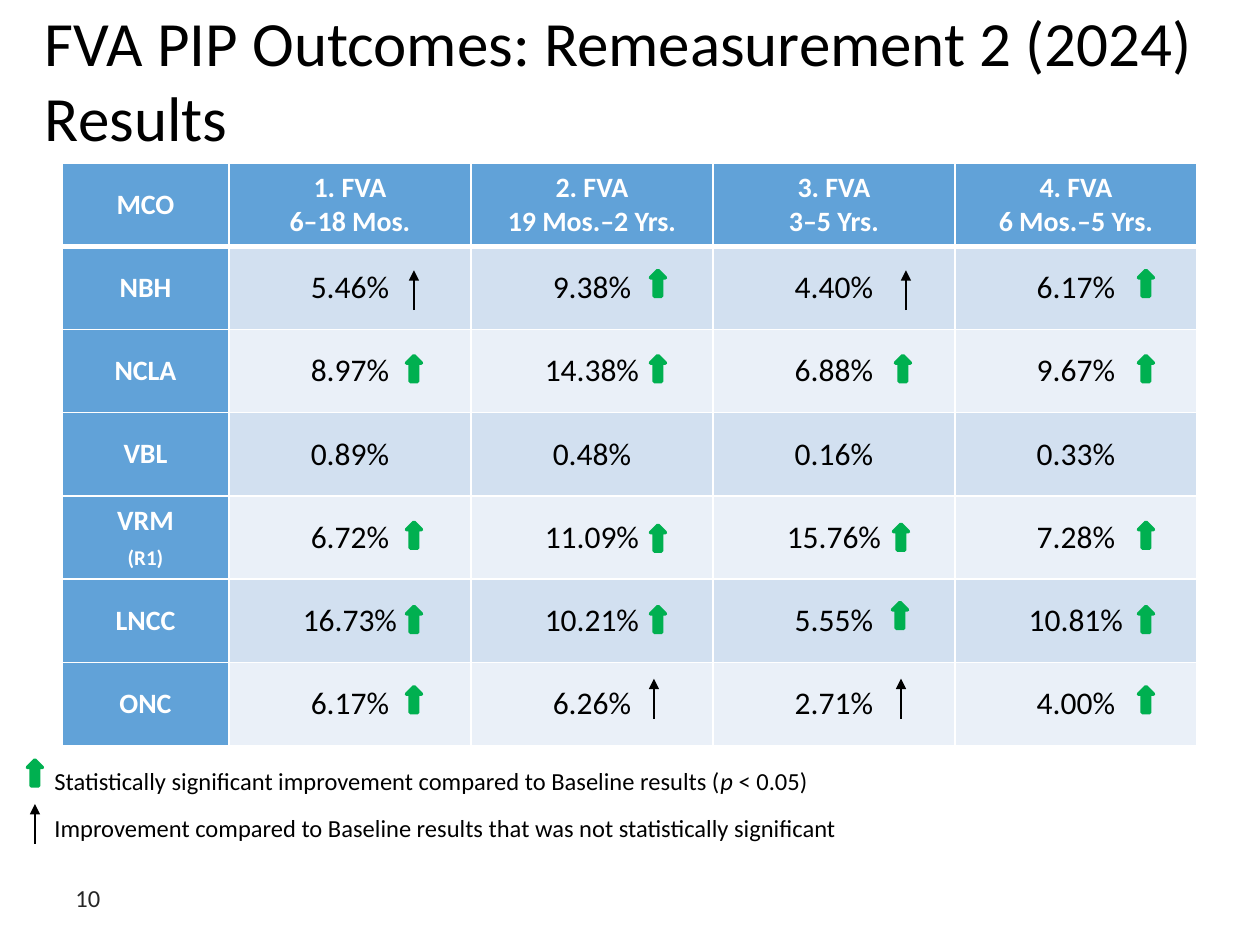
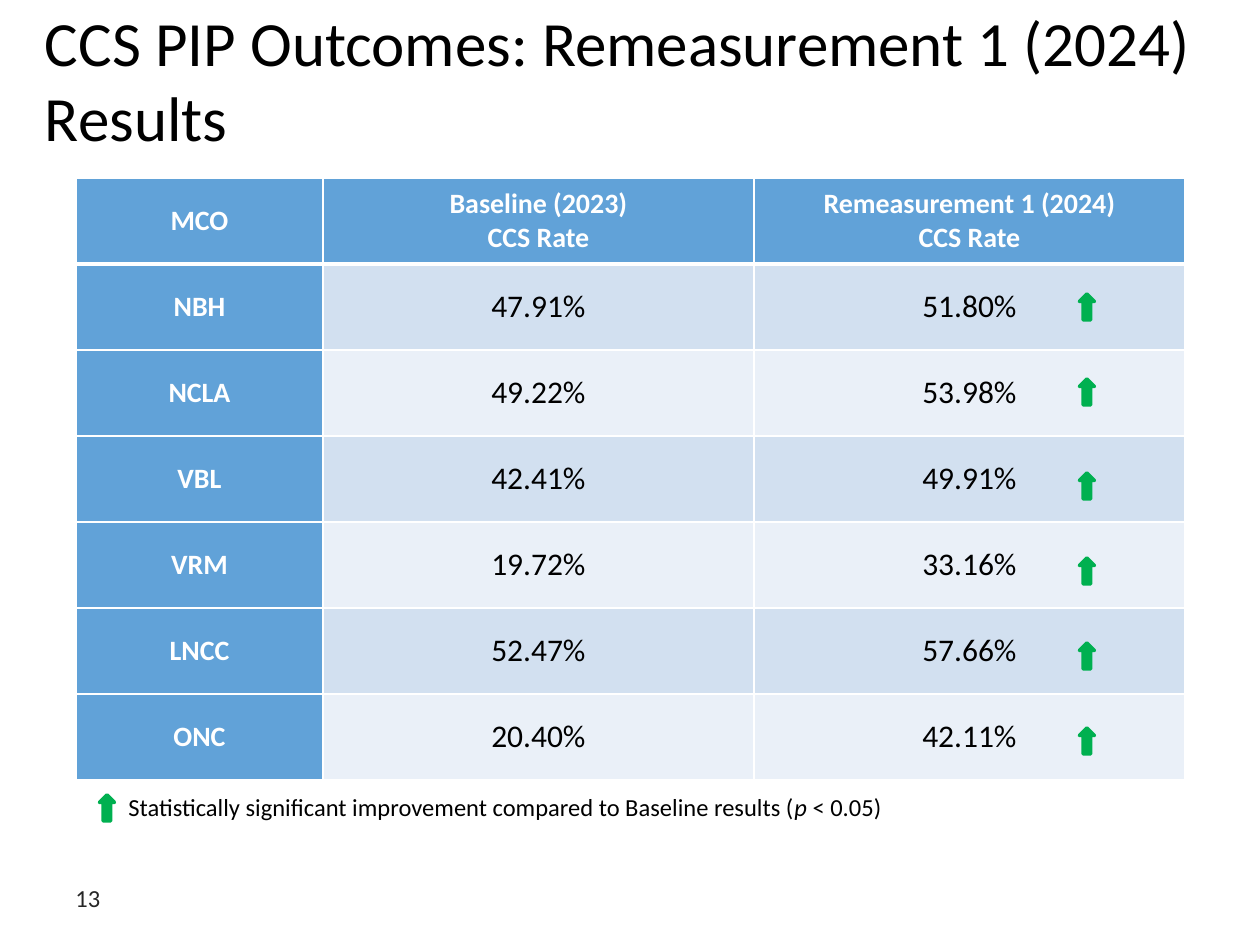
import pptx
import pptx.util
import pptx.dml.color
import pptx.enum.shapes
import pptx.enum.text
import pptx.oxml
import pptx.oxml.ns

EMU_PER_PX = 914400 / 126
FONT = "Calibri"
COLORS = {
    "black": "000000",
    "white": "FFFFFF",
    "number": "262626",
    "header": "61A2D8",
    "band_dark": "D2E0F0",
    "band_light": "EAF0F8",
    "green": "00B050",
}
ALIGN = pptx.enum.text.PP_ALIGN
MIDDLE = pptx.enum.text.MSO_ANCHOR.MIDDLE
SIGNIFICANT, NOT_SIGNIFICANT = "S", "N"
LEGEND = {
    SIGNIFICANT: "Statistically significant improvement compared to Baseline results (*p* < 0.05)",
    NOT_SIGNIFICANT: "Improvement compared to Baseline results that was not statistically significant",
}

# Each row: plan, rates, one mark per rate ("-" for none)
FVA = {
    "title": "FVA PIP Outcomes: Remeasurement 2 (2024) Results",
    "number": "10",
    "box": (62, 163, 1135, 583),
    "columns": [167, 242, 242, 242, 242],
    "header": ["MCO", "1. FVA\n6–18 Mos.", "2. FVA\n19 Mos.–2 Yrs.",
               "3. FVA\n3–5 Yrs.", "4. FVA\n6 Mos.–5 Yrs."],
    "rows": [
        ("NBH", ["5.46%", "9.38%", "4.40%", "6.17%"], "NSNS"),
        ("NCLA", ["8.97%", "14.38%", "6.88%", "9.67%"], "SSSS"),
        ("VBL", ["0.89%", "0.48%", "0.16%", "0.33%"], "----"),
        ("VRM\n(R1)", ["6.72%", "11.09%", "15.76%", "7.28%"], "SSSS"),
        ("LNCC", ["16.73%", "10.21%", "5.55%", "10.81%"], "SSSS"),
        ("ONC", ["6.17%", "6.26%", "2.71%", "4.00%"], "SNNS"),
    ],
    "mark_x": [185, 187, 190, 191],
    "mark_y": [24, 26, 26, 26, 27, 24],
    "nudges": {(0, 2): (3, 0), (3, 1): (0, 3), (3, 2): (-2, 2), (4, 2): (-3, -4),
               (5, 1): (-4, -8), (5, 2): (-2, -8)},
    "legend_box": (42, 760, 1070, 89),
    "legend_marks": [(SIGNIFICANT, -7, 0), (NOT_SIGNIFICANT, -7, 44)],
}
CCS = {
    "title": "CCS PIP Outcomes: Remeasurement 1 (2024) Results",
    "number": "13",
    "box": (76, 178, 1109, 602),
    "columns": [247, 431, 431],
    "header": ["MCO", "Baseline (2023)\nCCS Rate", "Remeasurement 1 (2024)\nCCS Rate"],
    "rows": [
        ("NBH", ["47.91%", "51.80%"], "-S"),
        ("NCLA", ["49.22%", "53.98%"], "-S"),
        ("VBL", ["42.41%", "49.91%"], "-S"),
        ("VRM", ["19.72%", "33.16%"], "-S"),
        ("LNCC", ["52.47%", "57.66%"], "-S"),
        ("ONC", ["20.40%", "42.11%"], "-S"),
    ],
    "mark_x": [0, 333],
    "mark_y": [30, 29, 37, 36, 35, 34],
    "nudges": {},
    "legend_box": (116, 786, 1070, 43),
    "legend_marks": [(SIGNIFICANT, -9, 9)],
}


def px(length):
    return pptx.util.Emu(round(length * EMU_PER_PX))


def rgb(name):
    return pptx.dml.color.RGBColor.from_string(COLORS[name])


def write_text(frame, text, size=14, color="black", bold=False, align=ALIGN.LEFT,
               gap=0, last_size=None):
    """Newlines part paragraphs; words between asterisks are italic."""
    frame.word_wrap = True
    lines = text.split("\n")
    for index, line in enumerate(lines):
        paragraph = frame.paragraphs[0] if index == 0 else frame.add_paragraph()
        paragraph.alignment = align
        if index:
            paragraph.space_before = pptx.util.Pt(gap)
        is_last = index == len(lines) - 1
        for part, words in enumerate(line.split("*")):
            run = paragraph.add_run()
            run.text = words
            run.font.name = FONT
            run.font.size = pptx.util.Pt(last_size if last_size and is_last else size)
            run.font.bold = bold
            run.font.italic = part % 2 == 1
            run.font.color.rgb = rgb(color)


def add_text_box(slide, box, text, anchor=None, **text_format):
    frame = slide.shapes.add_textbox(*map(px, box)).text_frame
    if anchor is not None:
        frame.vertical_anchor = anchor
    write_text(frame, text, **text_format)


def add_mark(slide, kind, center, top):
    if kind == SIGNIFICANT:
        arrow = slide.shapes.add_shape(pptx.enum.shapes.MSO_SHAPE.UP_ARROW,
                                       px(center - 7.5), px(top), px(15), px(26))
        arrow.shadow.inherit = False
        arrow.fill.solid()
        arrow.fill.fore_color.rgb = rgb("green")
        arrow.line.color.rgb = rgb("green")
        arrow.line.width = pptx.util.Pt(2)
        return
    arrow = slide.shapes.add_connector(pptx.enum.shapes.MSO_CONNECTOR.STRAIGHT,
                                       px(center), px(top + 40), px(center), px(top))
    arrow.line.color.rgb = rgb("black")
    arrow.line.width = pptx.util.Pt(0.75)
    properties = arrow._element.spPr
    line = properties.find(pptx.oxml.ns.qn("a:ln"))
    line.append(pptx.oxml.parse_xml(
        f'<a:tailEnd {pptx.oxml.ns.nsdecls("a")} type="triangle"/>'))
    properties.append(pptx.oxml.parse_xml(f'<a:effectLst {pptx.oxml.ns.nsdecls("a")}/>'))


def format_cell(cell, fill, top=1, bottom=1):
    cell.vertical_anchor = MIDDLE
    cell.margin_left = cell.margin_right = px(9)
    cell.margin_top = cell.margin_bottom = 0
    properties = cell._tc.get_or_add_tcPr()
    for side, points in (("L", 1), ("R", 1), ("T", top), ("B", bottom)):
        properties.append(pptx.oxml.parse_xml(
            f'<a:ln{side} {pptx.oxml.ns.nsdecls("a")} w="{points * 12700}"><a:solidFill>'
            f'<a:srgbClr val="{COLORS["white"]}"/></a:solidFill></a:ln{side}>'))
    cell.fill.solid()
    cell.fill.fore_color.rgb = rgb(fill)


def add_title(slide, text):
    title = slide.shapes.title
    title.left, title.top, title.width, title.height = map(px, (32, 5, 1197, 148))
    frame = title.text_frame
    frame.margin_left = frame.margin_right = 0
    frame.margin_top = frame.margin_bottom = px(6)
    frame.vertical_anchor = MIDDLE
    frame.auto_size = pptx.enum.text.MSO_AUTO_SIZE.NONE
    write_text(frame, text, size=36)
    indent = frame.paragraphs[0]._p.get_or_add_pPr()
    indent.set("marL", str(px(13)))
    indent.set("indent", "0")


def add_rate_table(slide, content):
    rows, columns = content["rows"], content["columns"]
    table = slide.shapes.add_table(len(rows) + 1, len(columns),
                                   *map(px, content["box"])).table
    table.first_row = table.horz_banding = False
    for column, width in zip(table.columns, columns):
        column.width = px(width)
    for row in table.rows:
        row.height = px(content["box"][3] / (len(rows) + 1))

    heading = {"size": 16, "color": "white", "bold": True, "align": ALIGN.CENTER}
    for index, label in enumerate(content["header"]):
        cell = table.cell(0, index)
        format_cell(cell, "header", bottom=3)
        write_text(cell.text_frame, label, **heading)
    for row_index, (plan, rates, _) in enumerate(rows, start=1):
        top = 3 if row_index == 1 else 1
        cell = table.cell(row_index, 0)
        format_cell(cell, "header", top=top)
        write_text(cell.text_frame, plan, gap=4,
                   last_size=12 if "\n" in plan else None, **heading)
        for column_index, rate in enumerate(rates, start=1):
            cell = table.cell(row_index, column_index)
            format_cell(cell, "band_dark" if row_index % 2 else "band_light", top=top)
            write_text(cell.text_frame, rate, size=18, align=ALIGN.CENTER)


def add_rate_marks(slide, content):
    left, top, _, height = content["box"]
    row_height = height / (len(content["rows"]) + 1)
    for row, (_, _, marks) in enumerate(content["rows"]):
        for column, kind in enumerate(marks):
            if kind == "-":
                continue
            nudge_x, nudge_y = content["nudges"].get((row, column), (0, 0))
            cell_left = left + sum(content["columns"][:column + 1])
            cell_top = top + row_height * (row + 1)
            add_mark(slide, kind, cell_left + content["mark_x"][column] + nudge_x,
                     cell_top + content["mark_y"][row] + nudge_y)


def add_legend(slide, box, marks):
    add_text_box(slide, box, "\n".join(LEGEND[kind] for kind, _, _ in marks), gap=10)
    for kind, offset_x, offset_y in marks:
        add_mark(slide, kind, box[0] + offset_x, box[1] + offset_y)


def add_results_slide(presentation, content):
    slide = presentation.slides.add_slide(presentation.slide_layouts[5])
    add_title(slide, content["title"])
    add_text_box(slide, (63, 861, 105, 73), content["number"], anchor=MIDDLE, color="number")
    add_rate_table(slide, content)
    add_rate_marks(slide, content)
    add_legend(slide, content["legend_box"], content["legend_marks"])


def main():
    presentation = pptx.Presentation()
    presentation.slide_width, presentation.slide_height = px(1260), px(945)
    for content in (FVA, CCS):
        add_results_slide(presentation, content)
    presentation.save("out.pptx")


if __name__ == "__main__":
    main()
